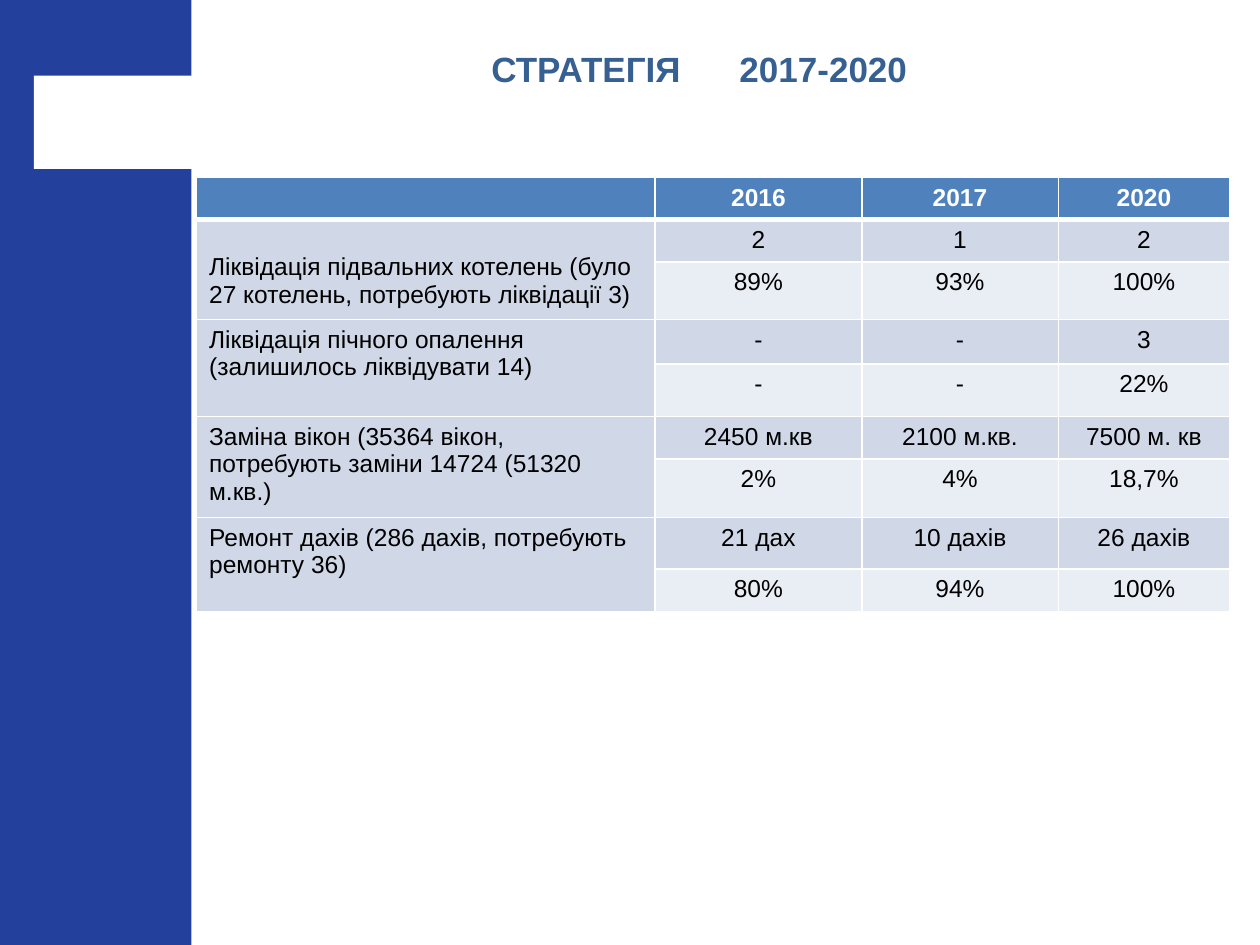
from lxml import etree
from pptx import Presentation
from pptx.dml.color import RGBColor
from pptx.enum.shapes import MSO_SHAPE
from pptx.enum.text import MSO_ANCHOR, PP_ALIGN
from pptx.oxml.ns import qn
from pptx.util import Inches, Pt

RECT = MSO_SHAPE.RECTANGLE
MIDDLE = MSO_ANCHOR.MIDDLE
LEFT, CENTER = PP_ALIGN.LEFT, PP_ALIGN.CENTER

COLORS = {
    "sidebar": "23409D", "white": "FFFFFF", "title": "376092", "text": "000000",
    "header": "4F81BD", "band_dark": "D0D8E8", "band_light": "E9EDF4",
}
TITLE = {"size": Pt(20), "bold": True, "color": "title"}
HEADER = {"size": Pt(14), "bold": True, "color": "white"}
BODY = {"size": Pt(14), "bold": False, "color": "text"}

COLUMN_WIDTHS = [3.64, 1.64, 1.56, 1.36]
ROW_HEIGHTS = [0.33, 0.33, 0.46, 0.35, 0.42, 0.33, 0.42, 0.41, 0.33]
YEARS = ["", "2016", "2017", "2020"]
# Each measure: label, amounts per year, shares per year
MEASURES = [
    ("Ліквідація підвальних котелень (було 27 котелень, потребують ліквідації 3)",
     ["2", "1", "2"], ["89%", "93%", "100%"]),
    ("Ліквідація пічного опалення (залишилось ліквідувати 14)",
     ["-", "-", "3"], ["-", "-", "22%"]),
    ("Заміна вікон (35364 вікон, потребують заміни 14724 (51320 м.кв.)",
     ["2450 м.кв", "2100 м.кв.", "7500 м. кв"], ["2%", "4%", "18,7%"]),
    ("Ремонт дахів (286 дахів, потребують ремонту 36)",
     ["21 дах", "10 дахів", "26 дахів"], ["80%", "94%", "100%"]),
]


def rgb(name):
    return RGBColor.from_string(COLORS[name])


class SlideBuilder:
    font = "Arial"

    def __init__(self, slide):
        self.s = slide

    def add_run(self, p, text, style):
        r = p.add_run()
        r.text = text
        r.font.name = self.font
        r.font.color.rgb = rgb(style["color"])
        for name in ("size", "bold"):
            setattr(r.font, name, style[name])
        return r

    def rect(self, x, y, w, h, color):
        sp = self.s.shapes.add_shape(RECT, Inches(x), Inches(y), Inches(w), Inches(h))
        sp.shadow.inherit = False
        sp.fill.solid()
        sp.fill.fore_color.rgb = rgb(color)
        sp.line.fill.background()

    def title(self, x, y, w, h, left, right, gap):
        """Centre two words with a single space widened by gap points."""
        sp = self.s.shapes.add_textbox(Inches(x), Inches(y), Inches(w), Inches(h))
        tf = sp.text_frame
        tf.word_wrap = True
        tf.vertical_anchor = MIDDLE
        p = tf.paragraphs[0]
        p.alignment = CENTER
        self.add_run(p, left, TITLE)
        space = self.add_run(p, " ", TITLE)
        space.font._element.set("spc", str(gap * 100))
        self.add_run(p, right, TITLE)

    def table(self, x, y, widths, heights):
        frame = self.s.shapes.add_table(
            len(heights), len(widths), Inches(x), Inches(y),
            Inches(sum(widths)), Inches(sum(heights)))
        table = frame.table
        for column, width in zip(table.columns, widths):
            column.width = Inches(width)
        for row, height in zip(table.rows, heights):
            row.height = Inches(height)
        return table

    def borders(self, cell, top=1, bottom=1):
        tc_pr = cell._tc.get_or_add_tcPr()
        for side, width in (("L", 1), ("R", 1), ("T", top), ("B", bottom)):
            ln = etree.SubElement(tc_pr, qn(f"a:ln{side}"), w=str(Pt(width)))
            fill = etree.SubElement(ln, qn("a:solidFill"))
            etree.SubElement(fill, qn("a:srgbClr"), val=COLORS["white"])

    def cell(self, cell, text, style, fill, align=CENTER, **border_widths):
        self.borders(cell, **border_widths)
        cell.fill.solid()
        cell.fill.fore_color.rgb = rgb(fill)
        p = cell.text_frame.paragraphs[0]
        p.alignment = align
        p.font.size = style["size"]
        if text:
            self.add_run(p, text, style)


def main():
    prs = Presentation()
    prs.slide_width, prs.slide_height = Inches(10), Inches(7.5)
    b = SlideBuilder(prs.slides.add_slide(prs.slide_layouts[6]))

    b.rect(0, -0.04, 1.52, 7.63, "sidebar")
    b.rect(0.27, 0.6, 1.33, 0.74, "white")
    b.title(1.95, 0.23, 7.2, 0.62, "СТРАТЕГІЯ", "2017-2020", gap=28)

    table = b.table(1.56, 1.41, COLUMN_WIDTHS, ROW_HEIGHTS)
    for col, year in enumerate(YEARS):
        b.cell(table.cell(0, col), year, HEADER, "header", bottom=3)
    for i, (label, amounts, shares) in enumerate(MEASURES):
        row = 1 + 2 * i
        top = 3 if row == 1 else 1
        lines = [([label] + amounts, "band_dark", top), ([""] + shares, "band_light", 1)]
        for offset, (texts, fill, width) in enumerate(lines):
            for col, text in enumerate(texts):
                b.cell(table.cell(row + offset, col), text, BODY,
                       fill if col else "band_dark", CENTER if col else LEFT, top=width)
        table.cell(row, 0).merge(table.cell(row + 1, 0))
    table.cell(1, 0).margin_top = Inches(0.27)

    prs.save("out.pptx")


if __name__ == "__main__":
    main()
